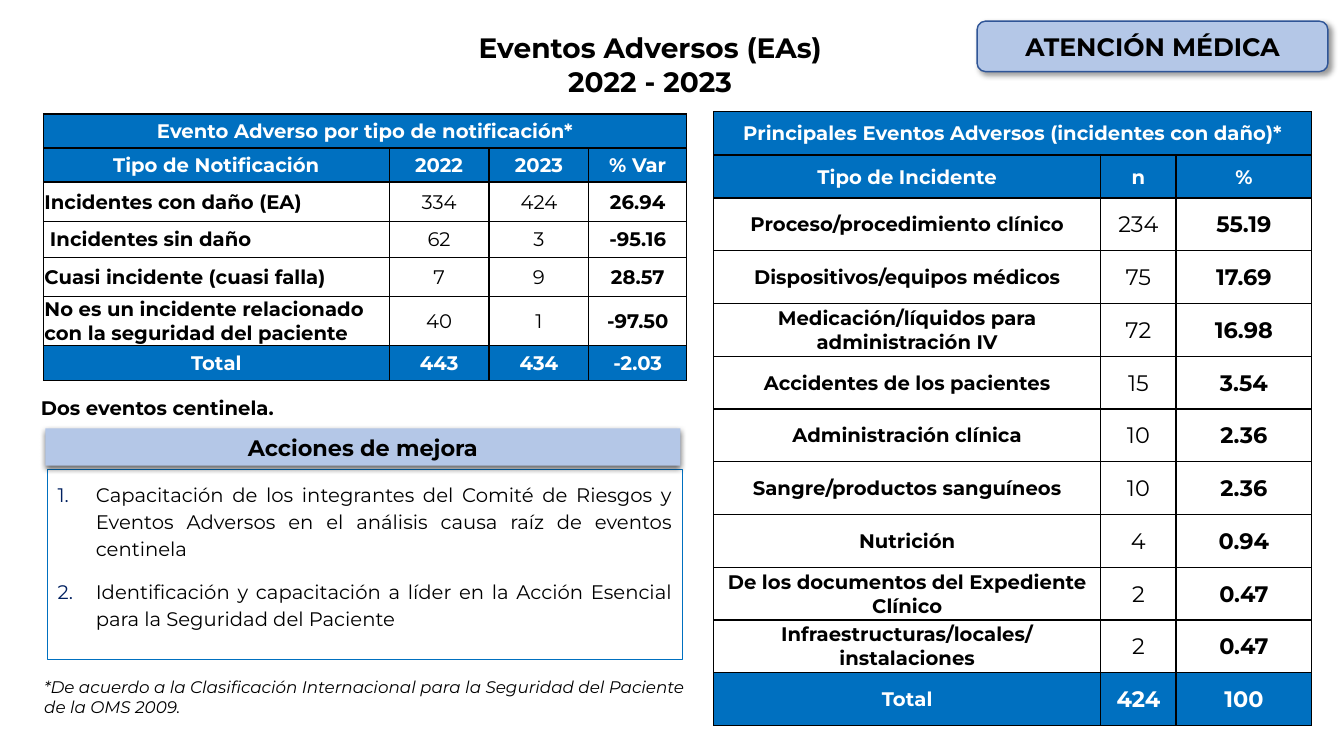
import pptx
import pptx.dml.color
import pptx.enum.shapes
import pptx.enum.text
import pptx.oxml
import pptx.oxml.ns
import pptx.util

FONT = "Montserrat"
BLUE, NAVY, PALE, EDGE = "0070C0", "002060", "B4C7E7", "2F5597"
BLACK, WHITE = "000000", "FFFFFF"
NS = pptx.oxml.ns.nsdecls("a")
ALIGN = pptx.enum.text.PP_ALIGN
ANCHOR = pptx.enum.text.MSO_ANCHOR
SHAPE = pptx.enum.shapes.MSO_SHAPE


def rgb(color):
    return pptx.dml.color.RGBColor.from_string(color)


class SlideBuilder:
    """Places elements on a grid of 100 columns by 100 rows."""

    def __init__(self, prs):
        self.col = prs.slide_width / 100
        self.row = prs.slide_height / 100
        self.slide = prs.slides.add_slide(prs.slide_layouts[1])

    def box(self, x, y, w, h):
        return (round(x * self.col), round(y * self.row),
                round(w * self.col), round(h * self.row))

    def place(self, sp, box):
        sp.left, sp.top, sp.width, sp.height = self.box(*box)

    def style_runs(self, p, size, bold, italic, color):
        for r in p.runs:
            r.font.name = FONT
            r.font.size = pptx.util.Pt(size)
            r.font.bold = bold
            r.font.italic = italic
            r.font.color.rgb = rgb(color)

    def fill_text(self, tf, text, size, align, bold=False, italic=False,
                  anchor=ANCHOR.MIDDLE):
        tf.text = text
        tf.word_wrap = True
        tf.auto_size = pptx.enum.text.MSO_AUTO_SIZE.NONE
        tf.vertical_anchor = anchor
        for p in tf.paragraphs:
            p.alignment = align
            self.style_runs(p, size, bold, italic, BLACK)

    def title(self, box, text):
        sp = self.slide.shapes.title
        self.place(sp, box)
        self.fill_text(sp.text_frame, text, 20, ALIGN.CENTER, bold=True)

    def numbered_list(self, box, items):
        sp = self.slide.placeholders[1]
        self.place(sp, box)
        sp.line.color.rgb = rgb(BLUE)
        sp.line.width = pptx.util.Pt(0.75)
        tf = sp.text_frame
        self.fill_text(tf, "\n".join(items), 14, ALIGN.JUSTIFY,
                       anchor=ANCHOR.TOP)
        tf.margin_top = tf.margin_bottom = pptx.util.Inches(0.1)
        indent = pptx.util.Inches(0.38)
        for p in tf.paragraphs:
            p.line_spacing = 1.14
            p.space_before = pptx.util.Pt(0)
            p.space_after = pptx.util.Pt(12)
            pPr = p._p.get_or_add_pPr()
            pPr.set("marL", str(indent))
            pPr.set("indent", str(-indent))
            for xml in (f'<a:buClr {NS}><a:srgbClr val="{NAVY}"/></a:buClr>',
                        f'<a:buFont {NS} typeface="{FONT}"/>',
                        f'<a:buAutoNum {NS} type="arabicPeriod"/>'):
                pPr.append(pptx.oxml.parse_xml(xml))

    def text(self, box, text, size, **style):
        sp = self.slide.shapes.add_textbox(*self.box(*box))
        self.fill_text(sp.text_frame, text, size, ALIGN.LEFT,
                       anchor=ANCHOR.TOP, **style)

    def banner(self, box, text, size, kind, shadow, line=None):
        sp = self.slide.shapes.add_shape(kind, *self.box(*box))
        sp.fill.solid()
        sp.fill.fore_color.rgb = rgb(PALE)
        if line:
            sp.line.color.rgb = rgb(line)
            sp.line.width = pptx.util.Pt(1)
        else:
            sp.line.fill.background()
        self.fill_text(sp.text_frame, text, size, ALIGN.CENTER, bold=True)
        self.shadow(sp, *shadow)

    def shadow(self, sp, alpha, blur, dist, angle):
        sp.shadow.inherit = False
        effects = sp._element.spPr.find(pptx.oxml.ns.qn("a:effectLst"))
        effects.append(pptx.oxml.parse_xml(
            f'<a:outerShdw {NS} blurRad="{pptx.util.Pt(blur)}" '
            f'dist="{pptx.util.Pt(dist)}" dir="{angle * 60000}" '
            f'algn="ctr" rotWithShape="0"><a:srgbClr val="{BLACK}">'
            f'<a:alpha val="{alpha * 1000}"/></a:srgbClr></a:outerShdw>'))

    def table(self, x, y, cols, rows, data, label_align, number_size):
        """Two header rows, body rows and a total row; the last column is bold."""
        frame = self.slide.shapes.add_table(
            len(rows), len(cols), *self.box(x, y, sum(cols), sum(rows)))
        tbl = frame.table
        tbl.first_row = tbl.horz_banding = False
        for column, w in zip(tbl.columns, cols):
            column.width = round(w * self.col)
        for row, h in zip(tbl.rows, rows):
            row.height = round(h * self.row)
        last_row, last_col = len(rows) - 1, len(cols) - 1
        for i, values in enumerate(data):
            banded = i < 2 or i == last_row
            for j in range(len(cols)):
                value = values[j] if j < len(values) else ""
                body_label = j == 0 and not banded
                self.cell(tbl.cell(i, j), value,
                          number_size if i > 1 and j > 0 else 14,
                          label_align if body_label else ALIGN.CENTER,
                          banded or j in (0, last_col),
                          WHITE if banded else BLACK,
                          BLUE if banded else WHITE)
        tbl.cell(0, 0).merge(tbl.cell(0, last_col))

    def cell(self, cell, text, size, align, bold, color, fill):
        cell.margin_left = cell.margin_right = pptx.util.Inches(0.01)
        cell.margin_top, cell.margin_bottom = pptx.util.Inches(0.01), 0
        cell.vertical_anchor = ANCHOR.MIDDLE
        tcPr = cell._tc.get_or_add_tcPr()
        for side in "LRTB":
            tcPr.append(pptx.oxml.parse_xml(
                f'<a:ln{side} {NS} w="{pptx.util.Pt(1)}"><a:solidFill>'
                f'<a:srgbClr val="{BLACK}"/></a:solidFill></a:ln{side}>'))
        cell.fill.solid()
        cell.fill.fore_color.rgb = rgb(fill)
        cell.text_frame.text = text
        p = cell.text_frame.paragraphs[0]
        p.alignment = align
        self.style_runs(p, size, bold, False, color)


NOTIFICATIONS = [
    ["Evento Adverso por tipo de notificación*"],
    ["Tipo de Notificación", "2022", "2023", "% Var"],
    ["Incidentes con daño (EA)", "334", "424", "26.94"],
    [" Incidentes sin daño", "62", "3", "-95.16"],
    ["Cuasi incidente (cuasi falla)", "7", "9", "28.57"],
    ["No es un incidente relacionado con la seguridad del paciente",
     "40", "1", "-97.50"],
    ["Total", "443", "434", "-2.03"],
]
INCIDENTS = [
    ["Principales Eventos Adversos (incidentes con daño)*"],
    ["Tipo de Incidente", "n", "%"],
    ["Proceso/procedimiento clínico", "234", "55.19"],
    ["Dispositivos/equipos médicos", "75", "17.69"],
    ["Medicación/líquidos para administración IV", "72", "16.98"],
    ["Accidentes de los pacientes", "15", "3.54"],
    ["Administración clínica", "10", "2.36"],
    ["Sangre/productos sanguíneos", "10", "2.36"],
    ["Nutrición", "4", "0.94"],
    ["De los documentos del Expediente Clínico", "2", "0.47"],
    ["Infraestructuras/locales/instalaciones", "2", "0.47"],
    ["Total", "424", "100"],
]
ACTIONS = [
    "Capacitación de los integrantes del Comité de Riesgos y Eventos Adversos "
    "en el análisis causa raíz de eventos centinela",
    "Identificación y capacitación a líder en la Acción Esencial para la "
    "Seguridad del Paciente",
]


def main():
    prs = pptx.Presentation()
    prs.slide_width = pptx.util.Inches(13.33)
    prs.slide_height = pptx.util.Inches(7.5)
    s = SlideBuilder(prs)

    # Heading
    s.title((24.83, 2.13, 47.1, 12.67), "Eventos Adversos (EAs)\n2022 - 2023")
    s.banner((72.7, 2.8, 26.1, 6.67), "ATENCIÓN MÉDICA", 18,
             SHAPE.ROUNDED_RECTANGLE, (40, 4, 3, 45), line=EDGE)

    # Tables
    s.table(3.23, 15.07, [25.73, 7.43, 7.43, 7.27],
            [4.5, 4.5, 5.2, 4.75, 5.2, 6.4, 4.7],
            NOTIFICATIONS, ALIGN.LEFT, 14)
    s.table(53.1, 14.8, [28.8, 5.6, 10.1], [5.7] * 2 + [6.98] * 10,
            INCIDENTS, ALIGN.CENTER, 16)

    # Improvement actions
    s.text((2.3, 51.73, 51.5, 4.53), "Dos eventos centinela.", 14, bold=True)
    s.numbered_list((3.53, 62.13, 47.25, 25.07), ACTIONS)
    s.banner((3.38, 56.67, 47.25, 4.93), "Acciones de mejora", 16,
             SHAPE.RECTANGLE, (63, 4.5, 1.5, 90))

    # Footnote
    s.text((2.55, 88.8, 49.5, 6.67),
           "*De acuerdo a la Clasificación Internacional para la Seguridad "
           "del Paciente de la OMS 2009.", 12, italic=True)

    prs.save("out.pptx")


if __name__ == "__main__":
    main()
